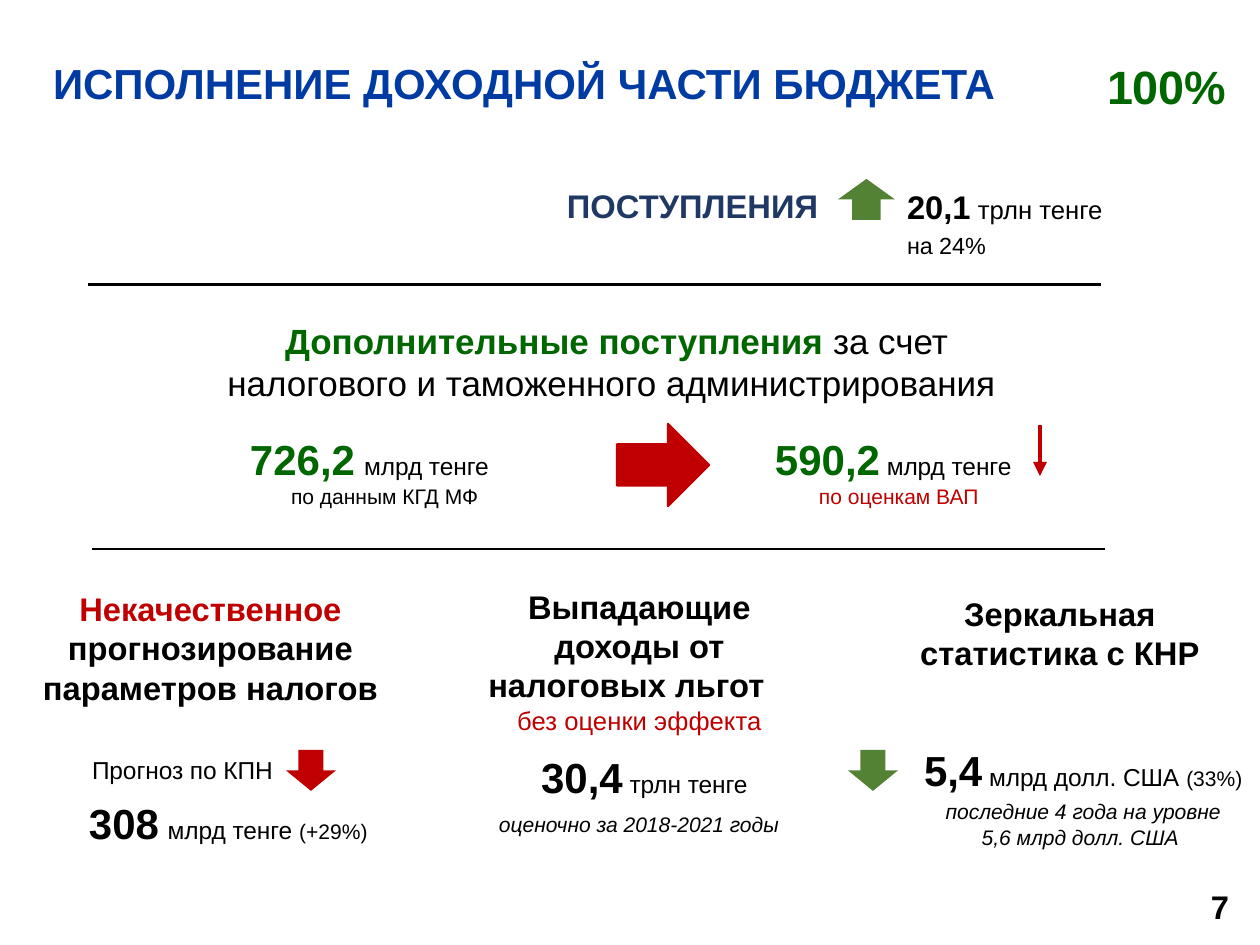
from pptx import Presentation
from pptx.dml.color import RGBColor
from pptx.enum.shapes import MSO_CONNECTOR, MSO_SHAPE
from pptx.enum.text import MSO_ANCHOR, PP_ALIGN
from pptx.oxml.ns import qn
from pptx.util import Pt
from lxml import etree

PX = 914400 / 168
LEFT, CENTER = PP_ALIGN.LEFT, PP_ALIGN.CENTER
TOP, MIDDLE = MSO_ANCHOR.TOP, MSO_ANCHOR.MIDDLE
STRAIGHT = MSO_CONNECTOR.STRAIGHT
UP, DOWN, RIGHT = MSO_SHAPE.UP_ARROW, MSO_SHAPE.DOWN_ARROW, MSO_SHAPE.RIGHT_ARROW

BLACK = RGBColor(0, 0, 0)
BLUE = RGBColor(0x00, 0x3B, 0xA3)
NAVY = RGBColor(0x20, 0x38, 0x64)
GREEN = RGBColor(0x00, 0x66, 0x00)
LEAF = RGBColor(0x54, 0x82, 0x35)
RED = RGBColor(0xC0, 0x00, 0x00)

deck = Presentation()
deck.slide_width, deck.slide_height = round(1260 * PX), round(945 * PX)
page = deck.slides.add_slide(deck.slide_layouts[6])


def emu(*lengths):
    return [round(length * PX) for length in lengths]


def add_text(place, inset, align, spacing, paragraphs, anchor=TOP):
    box = page.shapes.add_textbox(*emu(*place))
    frame = box.text_frame
    frame.word_wrap = True
    frame.vertical_anchor = anchor
    frame.margin_left, frame.margin_top = emu(*inset)
    frame.margin_right, frame.margin_bottom = emu(*inset)
    for index, spans in enumerate(paragraphs):
        para = frame.add_paragraph() if index else frame.paragraphs[0]
        para.alignment = align
        para.line_spacing = spacing
        for text, size, color, style in spans:
            span = para.add_run()
            span.text = text
            span.font.name = "Arial"
            span.font.size = Pt(size)
            span.font.color.rgb = color
            span.font.bold = "b" in style
            span.font.italic = "i" in style
    return frame


EVEN, WIDE = (13, 12), (17, 8)

add_text((40, 51, 1000, 64), EVEN, LEFT, 0.9,
         [[("ИСПОЛНЕНИЕ ДОХОДНОЙ ЧАСТИ БЮДЖЕТА", 18, BLUE, "b")]])
add_text((1094, 64, 158, 44), EVEN, LEFT, 1, [[("100%", 20, GREEN, "b")]], MIDDLE)

add_text((554, 178, 281, 57), EVEN, LEFT, 0.9, [[("ПОСТУПЛЕНИЯ", 14, NAVY, "b")]])
receipts = add_text((894, 175, 312, 99), EVEN, LEFT, 1, [
    [("20,1", 14, BLACK, "b"), (" трлн тенге", 11, BLACK, "")],
    [("на 24%", 10, BLACK, "")],
])
receipts.paragraphs[1].space_before = Pt(2)

add_text((193, 312, 847, 102), WIDE, CENTER, 1, [[
    ("Дополнительные поступления ", 15, GREEN, "b"),
    ("за счет налогового и таможенного администрирования ", 15, BLACK, ""),
]])
add_text((237, 422, 325, 60), EVEN, LEFT, 1, [[
    ("726,2", 18, GREEN, "b"), (" ", 14, BLACK, "b"), ("млрд тенге", 10.5, BLACK, ""),
]])
add_text((762, 422, 306, 60), EVEN, LEFT, 1, [[
    ("590,2", 18, GREEN, "b"), (" млрд тенге", 10.5, BLACK, ""),
]])
add_text((274, 475, 237, 42), WIDE, LEFT, 1, [[("по данным КГД МФ", 9, BLACK, "")]])
add_text((802, 475, 237, 42), WIDE, LEFT, 1, [[("по оценкам ВАП", 9, RED, "")]])

add_text((19, 581, 383, 136), WIDE, CENTER, 1, [[
    ("Некачественное ", 14, RED, "b"),
    ("прогнозирование параметров налогов", 14, BLACK, "b"),
]])
add_text((79, 743, 312, 57), EVEN, LEFT, 1, [[("Прогноз по КПН", 10.5, BLACK, "")]])
add_text((76, 791, 366, 57), EVEN, LEFT, 0.9, [[
    ("308", 18, BLACK, "b"), (" ", 13.5, BLACK, "b"),
    ("млрд тенге ", 10.5, BLACK, ""), ("(+29%)", 9, BLACK, ""),
]])

reliefs = add_text((452, 575, 375, 198), EVEN, CENTER, 1, [
    [("Выпадающие доходы от", 14, BLACK, "b")],
    [("налоговых льгот", 14, BLACK, "b")],
    [("без оценки эффекта", 11, RED, "")],
])
for para, indent in zip(reliefs.paragraphs, (0, 26, 0)):
    para._p.get_or_add_pPr().set("marR", str(emu(indent)[0]))
add_text((505, 745, 279, 99), EVEN, CENTER, 0.9, [[
    ("30,4", 18, BLACK, "b"), (" трлн тенге", 10.5, BLACK, ""),
]])
add_text((482, 803, 324, 42), WIDE, LEFT, 1,
         [[("оценочно за 2018-2021 годы", 9, BLACK, "i")]])

add_text((907, 582, 306, 114), EVEN, CENTER, 1,
         [[("Зеркальная статистика с КНР", 14, BLACK, "b")]])
add_text((907, 736, 380, 67), WIDE, LEFT, 1, [[
    ("5,4", 18, BLACK, "b"), (" млрд долл. США ", 10.5, BLACK, ""),
    ("(33%)", 9, BLACK, ""),
]])
add_text((921, 791, 324, 67), WIDE, CENTER, 1,
         [[("последние 4 года на уровне 5,6 млрд долл. США ", 9, BLACK, "i")]])
add_text((1194, 879, 48, 57), WIDE, LEFT, 1, [[("7", 14, BLACK, "b")]])

for kind, place, color in (
    (UP, (838, 179, 57, 41), LEAF),
    (RIGHT, (617, 424, 92, 82), RED),
    (DOWN, (286, 750, 50, 41), RED),
    (DOWN, (848, 750, 50, 41), LEAF),
):
    arrow = page.shapes.add_shape(kind, *emu(*place))
    arrow.shadow.inherit = False
    arrow.fill.solid()
    arrow.fill.fore_color.rgb = color
    if kind == RIGHT:
        arrow.line.color.rgb = color
        arrow.line.width = Pt(1)
    else:
        arrow.line.fill.background()

for ends, color, width, pointed in (
    ((88, 285, 1101, 285), BLACK, 1.25, False),
    ((92, 549, 1105, 549), BLACK, 1.25, False),
    ((1040, 425, 1040, 476), RED, 2, True),
):
    line = page.shapes.add_connector(STRAIGHT, *emu(*ends))
    line.line.color.rgb = color
    line.line.width = Pt(width)
    if pointed:
        etree.SubElement(line.line._get_or_add_ln(), qn("a:tailEnd"), type="triangle")
    etree.SubElement(line._element.spPr, qn("a:effectLst"))

deck.save("out.pptx")
